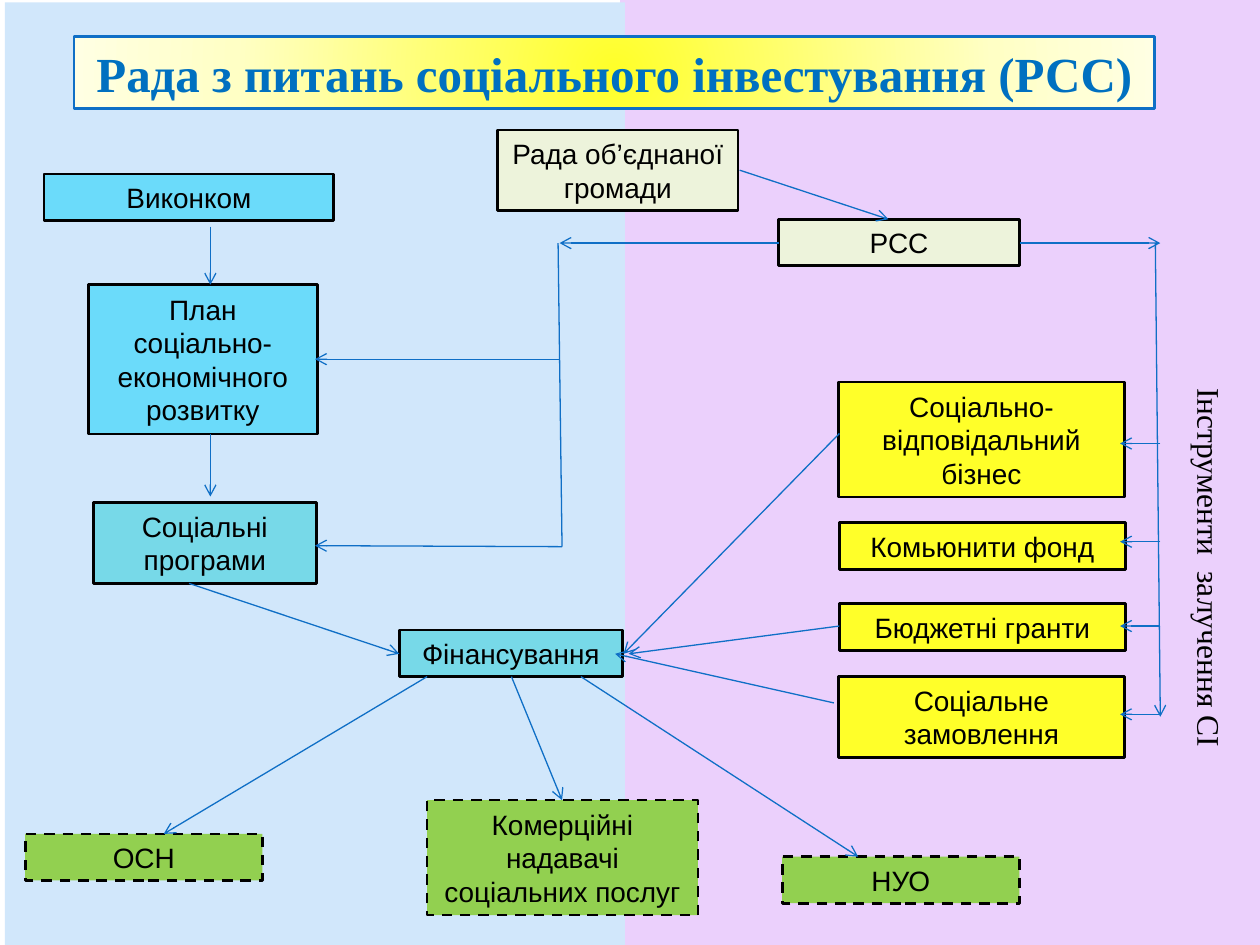
from lxml import etree
from pptx import Presentation
from pptx import util as u
from pptx.dml import color
from pptx.enum import dml, shapes, text
from pptx.oxml import ns, parse_xml

# All positions and lengths are in centimetres.
SLIDE = (25.4, 19.05)
BLUE, BLACK = "0F6FC6", "000000"
CYAN, TEAL, IVORY, YELLOW, GREEN = "6BDBFA", "77D9E8", "EDF3DB", "FFFF29", "92D050"
LINE_HEIGHT, BOX_PADDING = 0.69, 0.25

BACKGROUNDS = [
    ((12.5, 0, 12.9, 19.05), "EBD0FC"),
    ((0.1, 0.05, 12.5, 19.05), "D1E7FB"),
]

TITLE = "Рада з питань соціального інвестування (РСС)"
TITLE_STOPS = [(0, "FFFF29"), (70, "FFFFC5"), (100, "FFFFE3")]
SIDE_LABEL = "Інструменти  залучення СІ"

# text, left, top, width, number of text lines, fill
BOXES = [
    ("Рада об’єднаної громади", 10.03, 2.62, 4.85, 2, IVORY),
    ("РСС", 15.7, 4.42, 4.85, 1, IVORY),
    ("Виконком", 0.89, 3.51, 5.84, 1, CYAN),
    ("План соціально-економічного розвитку", 1.78, 5.74, 4.62, 4, CYAN),
    ("Соціальні програми", 1.88, 10.13, 4.5, 2, TEAL),
    ("Фінансування", 8.05, 12.7, 4.5, 1, TEAL),
    ("Соціально-відповідальний бізнес", 16.9, 7.7, 5.77, 3, YELLOW),
    ("Комьюнити фонд", 16.92, 10.54, 5.77, 1, YELLOW),
    ("Бюджетні гранти", 16.92, 12.17, 5.77, 1, YELLOW),
    ("Соціальне замовлення", 16.9, 13.64, 5.77, 2, YELLOW),
    ("ОСН", 0.51, 16.81, 4.78, 1, GREEN),
    ("Комерційні надавачі соціальних послуг", 8.61, 16.13, 5.46, 3, GREEN),
    ("НУО", 15.77, 17.27, 4.78, 1, GREEN),
]

PLAN_TRUNK = (11.25, 4.9, 11.33, 11.02)
TOOL_ROWS = [8.94, 10.92, 12.62, 14.4]
ARROWS = [
    # council to RSS, RSS to both trunks
    (14.91, 3.43, 17.91, 4.42),
    (15.7, 4.9, 11.28, 4.9),
    (20.57, 4.9, 23.39, 4.9),
    # executive committee, plan, programmes, financing
    (4.24, 4.57, 4.24, 5.74),
    (4.24, 8.74, 4.24, 10.01),
    (11.28, 7.24, 6.35, 7.24),
    (11.33, 11.02, 6.35, 11),
    (3.81, 11.76, 8.05, 13.18),
    # tools to financing
    (16.92, 8.74, 12.57, 13.18),
    (16.92, 12.62, 12.67, 13.18),
    (16.81, 14.17, 12.4, 13.18),
    # financing to providers
    (8.61, 13.64, 3.3, 16.81),
    (10.31, 13.64, 11.33, 16.13),
    (11.71, 13.64, 17.3, 17.27),
    # tools trunk and its branches
    (23.29, 4.9, 23.39, 14.45),
] + [(23.39, y, 22.58, y) for y in TOOL_ROWS]


def rgb(value):
    return color.RGBColor.from_string(value)


def cm(lengths):
    return [u.Cm(length) for length in lengths]


def write(shape, content, font="Arial", size=16, fill=BLACK, bold=False,
          align=text.PP_ALIGN.CENTER):
    frame = shape.text_frame
    frame.word_wrap = True
    frame.auto_size = text.MSO_AUTO_SIZE.SHAPE_TO_FIT_TEXT
    paragraph = frame.paragraphs[0]
    paragraph.alignment = align
    run = paragraph.add_run()
    run.text = content
    run.font.name, run.font.size, run.font.bold = font, u.Pt(size), bold
    run.font.color.rgb = rgb(fill)


def add_rectangle(slide, place, fill, line=None, dashed=False):
    shape = slide.shapes.add_shape(shapes.MSO_SHAPE.RECTANGLE, *cm(place))
    shape.shadow.inherit = False
    shape.fill.solid()
    shape.fill.fore_color.rgb = rgb(fill)
    if line:
        shape.line.color.rgb = rgb(line)
        shape.line.width = u.Pt(1.5)
        if dashed:
            shape.line.dash_style = dml.MSO_LINE.DASH
    else:
        shape.line.fill.background()
    return shape


def fill_radial(shape, stops):
    """Replace the solid fill by a gradient running out from the centre."""
    stop_xml = "".join(
        f'<a:gs pos="{position * 1000}"><a:srgbClr val="{value}"/></a:gs>'
        for position, value in stops)
    gradient = parse_xml(
        f'<a:gradFill {ns.nsdecls("a")} rotWithShape="1"><a:gsLst>{stop_xml}</a:gsLst>'
        '<a:path path="circle"><a:fillToRect l="50000" t="50000" r="50000" b="50000"/>'
        '</a:path></a:gradFill>')
    properties = shape.element.spPr
    properties.replace(properties.find(ns.qn("a:solidFill")), gradient)


def add_line(slide, ends, arrow=True):
    connector = slide.shapes.add_connector(shapes.MSO_CONNECTOR.STRAIGHT, *cm(ends))
    connector.line.color.rgb = rgb(BLUE)
    connector.line.width = u.Pt(0.75)
    if arrow:
        etree.SubElement(connector.line._get_or_add_ln(), ns.qn("a:tailEnd"), type="arrow")
    etree.SubElement(connector.element.spPr, ns.qn("a:effectLst"))


def main():
    presentation = Presentation()
    presentation.slide_width, presentation.slide_height = cm(SLIDE)
    slide = presentation.slides.add_slide(presentation.slide_layouts[6])

    for place, fill in BACKGROUNDS:
        add_rectangle(slide, place, fill)

    title = add_rectangle(slide, (1.49, 0.74, 21.79, 1.45), YELLOW, line=BLUE)
    fill_radial(title, TITLE_STOPS)
    write(title, TITLE, font="Times New Roman", size=28, fill="0070C0", bold=True)

    for content, left, top, width, lines, fill in BOXES:
        place = (left, top, width, lines * LINE_HEIGHT + BOX_PADDING)
        box = add_rectangle(slide, place, fill, line=BLACK, dashed=fill == GREEN)
        write(box, content)

    add_line(slide, PLAN_TRUNK, arrow=False)
    for ends in ARROWS:
        add_line(slide, ends)

    label = slide.shapes.add_textbox(*cm((20.12, 11.33, 8.53, 1.02)))
    label.rotation = 90
    write(label, SIDE_LABEL, font="Times New Roman", size=18, align=text.PP_ALIGN.LEFT)

    presentation.save("out.pptx")


if __name__ == "__main__":
    main()
